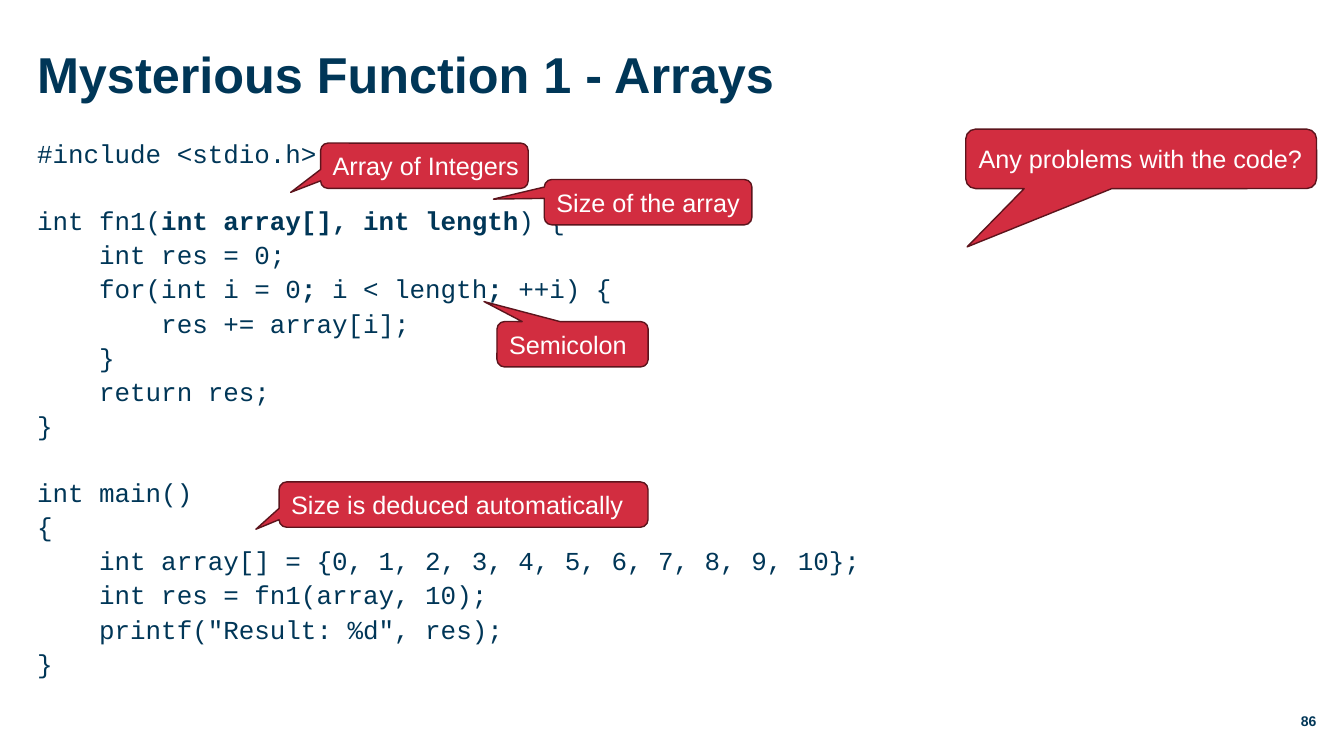
import pptx
import pptx.dml.color
import pptx.enum.shapes
import pptx.enum.text
import pptx.util

Pt = pptx.util.Pt
NAVY = pptx.dml.color.RGBColor(0x00, 0x36, 0x57)
RED = pptx.dml.color.RGBColor(0xD2, 0x2D, 0x40)
DARK_RED = pptx.dml.color.RGBColor(0x5C, 0x14, 0x1C)
WHITE = pptx.dml.color.RGBColor(0xFF, 0xFF, 0xFF)

CODE_SIZE = 18.5
BLANK_LINE = 23.1
BOLD_MARK = "~"
CODE = """#include <stdio.h>

int fn1(~int array[], int length~) {
    int res = 0;
    for(int i = 0~;~ i < length~;~ ++i) {
        res += array[i];
    }
    return res;
}

int main()
{
    int array[] = {0, 1, 2, 3, 4, 5, 6, 7, 8, 9, 10};
    int res = fn1(array, 10);
    printf("Result: %d", res);
}"""

CALLOUTS = [
    ("Any problems with the code?", (689.8, 92.2, 250.6, 42.5), (-0.496, 1.48)),
    ("Array of Integers", (229, 102.2, 148.3, 32.4), (-0.644, 0.587)),
    ("Size of the array", (388.8, 128.2, 148.3, 32.4), (-0.745, -0.067)),
    ("Semicolon", (355, 229.7, 108, 32.4), (-0.586, -0.941)),
    ("Size is deduced automatically", (199.4, 344.2, 263.5, 32.4), (-0.563, 0.544)),
]


def style_font(paragraph, name, size, color, bold=None):
    paragraph.font.name = name
    paragraph.font.size = Pt(size)
    paragraph.font.color.rgb = color
    paragraph.font.bold = bold


def add_text_frame(slide, box, anchor):
    text_frame = slide.shapes.add_textbox(*map(Pt, box)).text_frame
    text_frame.word_wrap = True
    text_frame.vertical_anchor = anchor
    return text_frame


def add_title(slide, box, text):
    text_frame = add_text_frame(slide, box, pptx.enum.text.MSO_ANCHOR.BOTTOM)
    text_frame.text = text
    style_font(text_frame.paragraphs[0], "Arial", 36, NAVY, True)


def add_code(slide, box, code):
    text_frame = add_text_frame(slide, box, pptx.enum.text.MSO_ANCHOR.TOP)
    for block_index, block in enumerate(code.split("\n\n")):
        for line_index, line in enumerate(block.split("\n")):
            if block_index == line_index == 0:
                paragraph = text_frame.paragraphs[0]
            else:
                paragraph = text_frame.add_paragraph()
            paragraph.line_spacing = 1.1
            if block_index > 0 and line_index == 0:
                paragraph.space_before = Pt(BLANK_LINE)
            style_font(paragraph, "Courier New", CODE_SIZE, NAVY)
            for part_index, part in enumerate(line.split(BOLD_MARK)):
                run = paragraph.add_run()
                run.text = part
                if part_index % 2:
                    run.font.bold = True


def add_callout(slide, box, text, tip):
    shape = slide.shapes.add_shape(
        pptx.enum.shapes.MSO_SHAPE.ROUNDED_RECTANGULAR_CALLOUT, *map(Pt, box))
    shape.shadow.inherit = False
    for index, value in enumerate((*tip, 0.167)):
        shape.adjustments[index] = value
    shape.fill.solid()
    shape.fill.fore_color.rgb = RED
    shape.line.color.rgb = DARK_RED
    shape.line.width = Pt(1)
    text_frame = shape.text_frame
    text_frame.word_wrap = True
    text_frame.margin_right = 0
    text_frame.vertical_anchor = pptx.enum.text.MSO_ANCHOR.MIDDLE
    text_frame.text = text
    paragraph = text_frame.paragraphs[0]
    paragraph.alignment = pptx.enum.text.PP_ALIGN.LEFT
    style_font(paragraph, "Arial", 18, WHITE)


def add_page_number(slide, box, number):
    text_frame = add_text_frame(slide, box, pptx.enum.text.MSO_ANCHOR.MIDDLE)
    text_frame.margin_left = text_frame.margin_right = 0
    text_frame.margin_top = text_frame.margin_bottom = 0
    text_frame.text = number
    paragraph = text_frame.paragraphs[0]
    paragraph.alignment = pptx.enum.text.PP_ALIGN.RIGHT
    style_font(paragraph, "Arial", 10, NAVY, True)


def main():
    presentation = pptx.Presentation()
    presentation.slide_width = Pt(960)
    presentation.slide_height = Pt(540)
    slide = presentation.slides.add_slide(presentation.slide_layouts[6])
    add_title(slide, (19.4, 0, 921.6, 77.8), "Mysterious Function 1 - Arrays")
    add_code(slide, (19.4, 92.9, 780.5, 398.9), CODE)
    for text, box, tip in CALLOUTS:
        add_callout(slide, box, text, tip)
    add_page_number(slide, (926.6, 508.3, 13.7, 13.7), "86")
    presentation.save("out.pptx")


if __name__ == "__main__":
    main()
